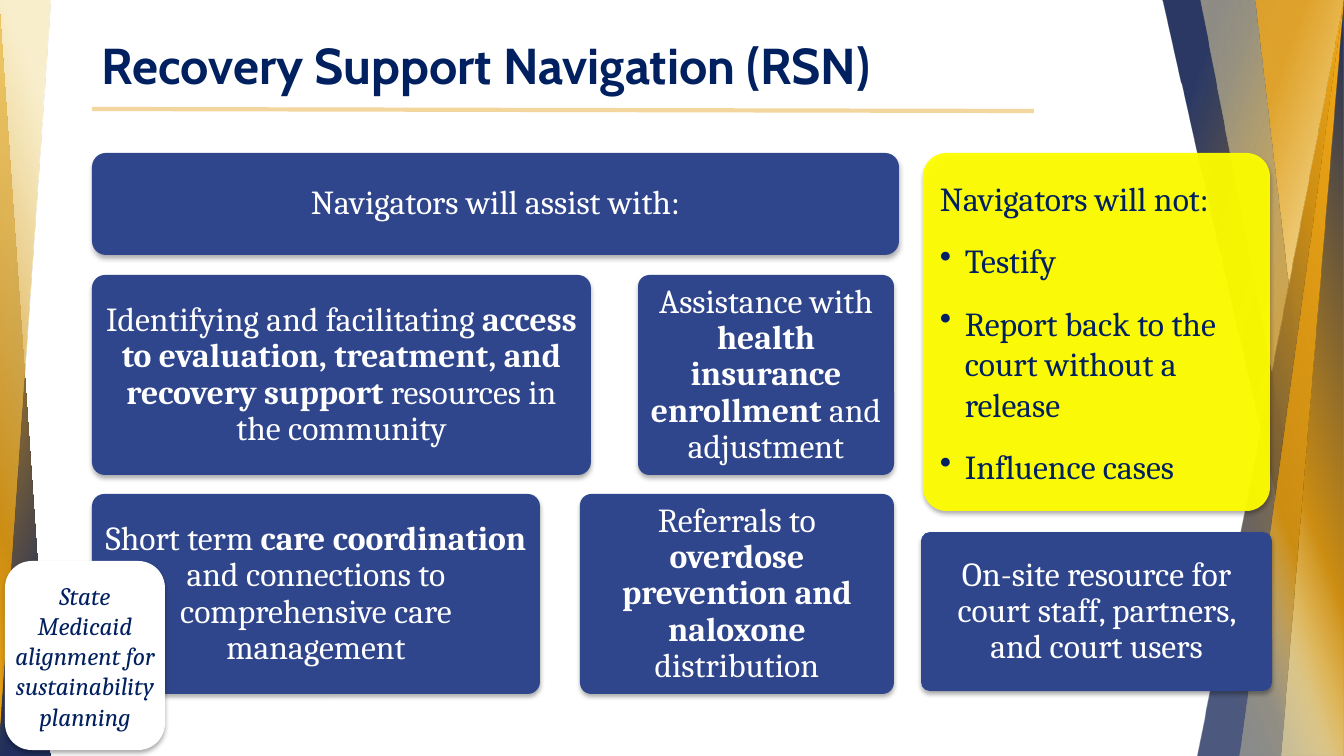
from lxml.etree import SubElement
from pptx import Presentation
from pptx.dml.color import RGBColor
from pptx.enum.shapes import MSO_CONNECTOR, MSO_SHAPE
from pptx.enum.text import MSO_ANCHOR, PP_ALIGN
from pptx.oxml.ns import qn
from pptx.util import Pt

COLORS = {
    "navy": "002060", "blue": "30468C", "white": "FFFFFF", "yellow": "FFFF00",
    "rule": "F3D69D", "ink": "1F2E5C", "gold": "CD8E13", "amber": "F3A917",
    "orange": "E5A425", "cream": "F5E3A5", "sand": "EDC56B", "pale": "F7EABA",
}
GOLD_END = [(74, "gold", 100), (100, "amber", 100)]
EARLY_GOLD_END = [(34, "gold", 100), (100, "amber", 100)]
RIBBONS = [
    (1270, 74, 180, False, [(14, "orange", 100), (49, "gold", 100), (90, "ink", 100)]),
    (1162, 172, 180, False, [(14, "ink", 94)] + GOLD_END),
    (1201, 143, 180, False, [(14, "cream", 49)] + GOLD_END),
    (1256, 88, 180, False, [(14, "orange", 89), (33, "sand", 100), (54, "pale", 100), (100, "amber", 100)]),
    (1198, 146, 0, True, [(14, "ink", 79)] + GOLD_END),
    (1240, 103, 0, True, [(14, "cream", 37)] + EARLY_GOLD_END),
    (1282, 62, 0, True, [(14, "cream", 57), (34, "gold", 100), (100, "ink", 100)]),
    (-1, 52, 0, False, [(14, "ink", 100)] + GOLD_END),
    (-1, 52, 180, True, [(14, "cream", 56)] + GOLD_END),
]
BLUE_CARDS = [
    ((92, 153, 807, 102), 0.136, "Navigators will assist with:"),
    ((92, 275, 499, 200), 0.065,
     "Identifying and facilitating *access to evaluation, treatment, and recovery support* resources in the community"),
    ((92, 494, 448, 200), 0.061,
     "Short term *care coordination *and connections to comprehensive care management"),
    ((638, 275, 256, 200), 0.057, "Assistance with *health insurance enrollment *and adjustment"),
    ((580, 494, 314, 200), 0.057, "Referrals to *overdose prevention and naloxone *distribution"),
]
RESOURCE_CARD = ((921, 532, 351, 159), 0.057, "On-site resource for court staff, partners, and court users")
BODY = {"name": "Cambria", "size": Pt(24)}
CENTERED = {"alignment": PP_ALIGN.CENTER}
TIGHT = {"line_spacing": 0.9}


def apply(target, values):
    for name, value in values.items():
        setattr(target, name, value)


class SlideBuilder:
    def __init__(self, presentation):
        self.scale = presentation.slide_width / 1344
        self.slide = presentation.slides.add_slide(presentation.slide_layouts[6])

    def lengths(self, *pixels):
        return [round(pixel * self.scale) for pixel in pixels]

    def color(self, name):
        return RGBColor.from_string(COLORS[name])

    def set_alpha(self, color_element, percent):
        SubElement(color_element, qn("a:alpha"), val=str(percent * 1000))

    def ribbon(self, left, width, rotation, flipped, stops):
        shape = self.slide.shapes.add_shape(MSO_SHAPE.RIGHT_TRIANGLE, *self.lengths(left, 0, width, 756))
        shape.rotation = rotation
        shape.shadow.inherit = False
        shape.line.fill.background()
        if flipped:
            shape._element.spPr.find(qn("a:xfrm")).set("flipH", "1")
        shape.fill.gradient()
        shape.fill.gradient_angle = 160
        stop_list = shape._element.spPr.find(".//" + qn("a:gsLst"))
        for stop in list(stop_list):
            stop_list.remove(stop)
        for position, color, alpha in stops:
            stop = SubElement(stop_list, qn("a:gs"), pos=str(position * 1000))
            self.set_alpha(SubElement(stop, qn("a:srgbClr"), val=COLORS[color]), alpha)

    def rule(self, *ends):
        line = self.slide.shapes.add_connector(MSO_CONNECTOR.STRAIGHT, *self.lengths(*ends))
        line.line.color.rgb = self.color("rule")
        line.line.width = Pt(3)
        SubElement(line._element.spPr, qn("a:effectLst"))

    def add_text(self, shape, paragraphs, color, font, layout, anchor, insets, bullets_from=99):
        frame = shape.text_frame
        sides = ("margin_left", "margin_top", "margin_right", "margin_bottom")
        apply(frame, {"word_wrap": True, "vertical_anchor": anchor})
        apply(frame, dict(zip(sides, self.lengths(*insets))))
        for index, text in enumerate(paragraphs):
            paragraph = frame.paragraphs[0] if index == 0 else frame.add_paragraph()
            apply(paragraph, {"alignment": PP_ALIGN.LEFT, **layout})
            if index >= bullets_from:
                indent = self.lengths(25)[0]
                properties = paragraph._p.get_or_add_pPr()
                properties.set("marL", str(indent))
                properties.set("indent", str(-indent))
                SubElement(properties, qn("a:buChar"), char="•")
            for part, words in enumerate(text.split("*")):
                run = paragraph.add_run()
                run.text = words
                apply(run.font, {"bold": part % 2 == 1, **font})
                run.font.color.rgb = self.color(color)

    def title(self, box, text):
        shape = self.slide.shapes.add_textbox(*self.lengths(*box))
        font = {"name": "Cabin", "size": Pt(36), "bold": True}
        self.add_text(shape, [text], "navy", font, TIGHT, MSO_ANCHOR.BOTTOM, (10, 5, 10, 5))

    def card(self, box, corner, fill, alpha=100):
        shape = self.slide.shapes.add_shape(MSO_SHAPE.ROUNDED_RECTANGLE, *self.lengths(*box))
        shape.adjustments[0] = corner
        shape.fill.solid()
        shape.fill.fore_color.rgb = self.color(fill)
        shape.line.fill.background()
        if alpha < 100:
            self.set_alpha(shape._element.spPr.find(".//" + qn("a:srgbClr")), alpha)
        shape.shadow.inherit = False
        effects = shape._element.spPr.find(qn("a:effectLst"))
        shadow = SubElement(effects, qn("a:outerShdw"), blurRad=str(int(Pt(3.5))), dist=str(int(Pt(2.2))),
                            dir="5400000", rotWithShape="0")
        self.set_alpha(SubElement(shadow, qn("a:srgbClr"), val="000000"), 32)
        return shape

    def blue_card(self, box, corner, text):
        shape = self.card(box, corner, "blue")
        self.add_text(shape, [text], "white", BODY, {**CENTERED, **TIGHT}, MSO_ANCHOR.MIDDLE, (8, 8, 8, 8))

    def note_card(self, box, text):
        shape = self.card(box, 0.167, "white")
        font = {**BODY, "size": Pt(18), "italic": True}
        self.add_text(shape, [text], "navy", font, CENTERED, MSO_ANCHOR.MIDDLE, (0, 0, 0, 0))

    def limits_card(self, box, paragraphs):
        shape = self.card(box, 0.068, "yellow", 95)
        self.add_text(shape, paragraphs, "navy", BODY, {"space_after": Pt(16)}, MSO_ANCHOR.MIDDLE,
                      (10, 5, 10, 5), bullets_from=1)


def main():
    presentation = Presentation()
    apply(presentation, {"slide_width": 12192000, "slide_height": 6858000})
    builder = SlideBuilder(presentation)
    for ribbon in RIBBONS:
        builder.ribbon(*ribbon)
    builder.rule(92, 109, 1034, 111)
    builder.title((92, 15, 1022, 85), "Recovery Support Navigation (RSN)")
    for card in BLUE_CARDS:
        builder.blue_card(*card)
    builder.note_card((5, 561, 160, 189), "State Medicaid alignment for sustainability planning")
    builder.limits_card((923, 153, 347, 358), [
        "Navigators will not:", "Testify", "Report back to the court without a release", "Influence cases"])
    builder.blue_card(*RESOURCE_CARD)
    presentation.save("out.pptx")


if __name__ == "__main__":
    main()
